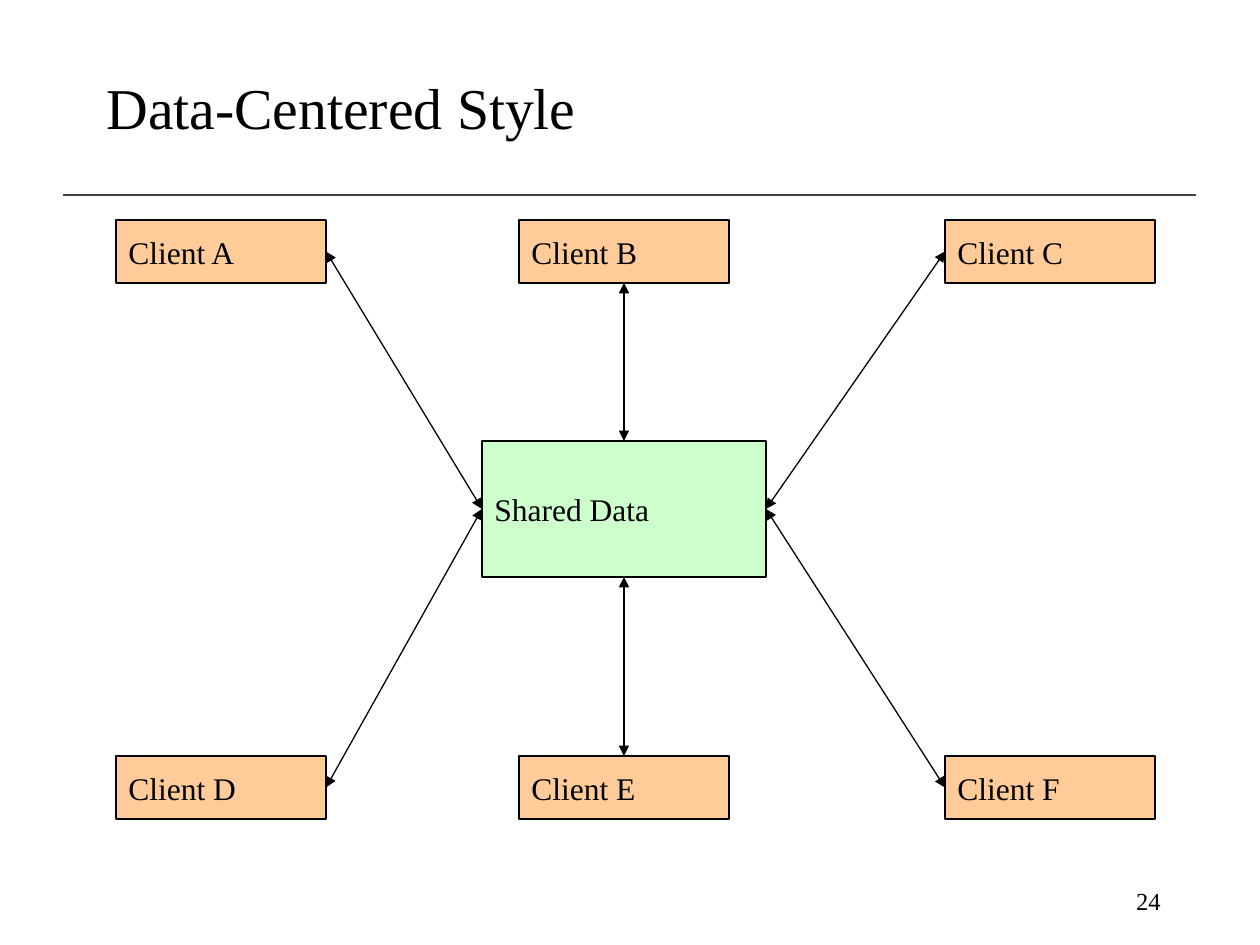
from lxml.etree import SubElement
from pptx import Presentation
from pptx.dml.color import RGBColor
from pptx.enum.shapes import MSO_CONNECTOR as Connector, MSO_SHAPE as Shape
from pptx.enum.text import MSO_ANCHOR as Anchor, PP_ALIGN as Align
from pptx.oxml.ns import qn
from pptx.util import Pt

# Content
TITLE = "Data-Centered Style"
PAGE_NUMBER = "24"
HUB = "Shared Data"
CLIENTS = [["Client A", "Client B", "Client C"],
           ["Client D", "Client E", "Client F"]]

# Layout in px, 126 to the inch
SLIDE = (1260, 945)
TITLE_BOX = (94, 32, 1071, 157)
NUMBER_BOX = (890, 876, 283, 50)
RULE = (63, 195, 1196, 195)
HUB_BOX = (482, 441, 284, 136)
CLIENT_LEFTS = [116, 519, 945]
CLIENT_TOPS = [220, 756]
CLIENT_SIZE = (210, 63)

FONT = "Times New Roman"
BLACK, GREY, GREEN, ORANGE = "000000", "404040", "CCFFCC", "FFCC99"

# Connection sites of a rectangle; each pair is (client, hub)
TOP, LEFT, BOTTOM, RIGHT = range(4)
SITES = [[(RIGHT, LEFT), (BOTTOM, TOP), (LEFT, RIGHT)],
         [(RIGHT, LEFT), (TOP, BOTTOM), (LEFT, RIGHT)]]


def px(*lengths):
    return [round(length * 914400 / 126) for length in lengths]


def color(value):
    return RGBColor.from_string(value)


def write(holder, text, size, align=Align.LEFT, spacing=1.0):
    frame = holder.text_frame
    frame.word_wrap = True
    frame.vertical_anchor = Anchor.MIDDLE
    paragraph = frame.paragraphs[0]
    paragraph.alignment = align
    paragraph.line_spacing = spacing
    run = paragraph.add_run()
    run.text = text
    for name, value in {"name": FONT, "size": Pt(size)}.items():
        setattr(run.font, name, value)
    run.font.color.rgb = color(BLACK)


def add_node(label, box, fill):
    node = slide.shapes.add_shape(Shape.RECTANGLE, *px(*box))
    node.shadow.inherit = False
    node.fill.solid()
    node.fill.fore_color.rgb = color(fill)
    node.line.color.rgb = color(BLACK)
    node.line.width = Pt(0.75)
    write(node, label, 18)
    return node


def add_line(ends, stroke, width, arrows=False):
    line = slide.shapes.add_connector(Connector.STRAIGHT, *px(*ends))
    line.line.color.rgb = color(stroke)
    line.line.width = Pt(width)
    if arrows:
        for end in ("a:headEnd", "a:tailEnd"):
            SubElement(line.line._get_or_add_ln(), qn(end), type="triangle")
    SubElement(line._element.spPr, qn("a:effectLst"))
    return line


deck = Presentation()
deck.slide_width, deck.slide_height = px(*SLIDE)
slide = deck.slides.add_slide(deck.slide_layouts[6])

# Rule, page number and title
add_line(RULE, GREY, 1)
write(slide.shapes.add_textbox(*px(*NUMBER_BOX)), PAGE_NUMBER, 14, Align.RIGHT)
write(slide.shapes.add_textbox(*px(*TITLE_BOX)), TITLE, 33, spacing=0.9)

# Shared data in the middle, clients above and below
hub = add_node(HUB, HUB_BOX, GREEN)
clients = [[add_node(label, (left, top, *CLIENT_SIZE), ORANGE)
            for label, left in zip(labels, CLIENT_LEFTS)]
           for labels, top in zip(CLIENTS, CLIENT_TOPS)]

# Two-way arrows from every client to the shared data
for row, row_sites in zip(clients, SITES):
    for client, (client_site, hub_site) in zip(row, row_sites):
        arrow = add_line((0, 0, 0, 0), BLACK, 0.75, arrows=True)
        arrow.begin_connect(client, client_site)
        arrow.end_connect(hub, hub_site)

deck.save("out.pptx")
